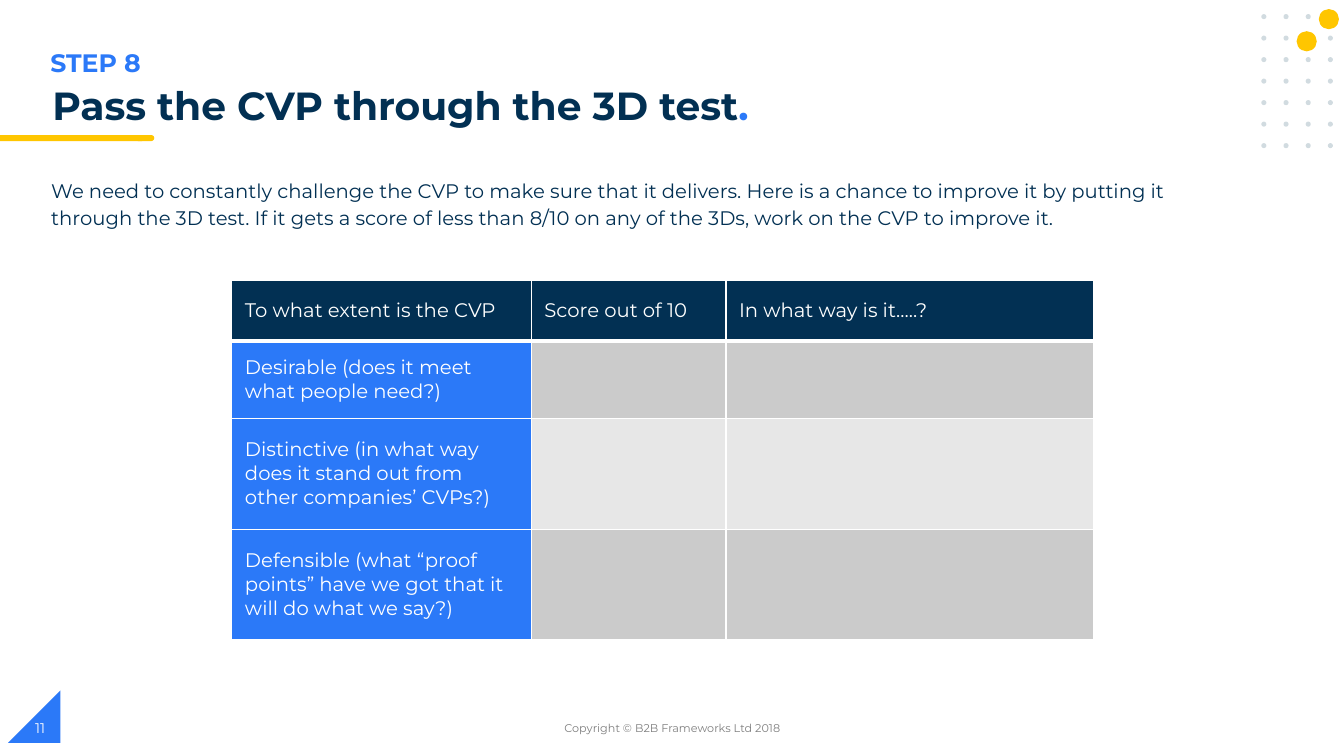
from dataclasses import dataclass

from lxml.etree import SubElement
from pptx import Presentation
from pptx.dml.color import RGBColor
from pptx.enum.shapes import MSO_SHAPE as Shape
from pptx.enum.text import MSO_ANCHOR as Anchor, MSO_AUTO_SIZE as Fit, PP_ALIGN as Align
from pptx.oxml.ns import qn
from pptx.util import Inches, Pt

NAVY, BLUE, GOLD, WHITE = "023053", "2B79F8", "FFC600", "FFFFFF"
DARK, LIGHT, DOT, GREY = "CBCBCB", "E7E7E7", "D1DBE0", "7F7F7F"
FONT = "Montserrat"


@dataclass
class Mark:
    kind: Shape
    x: float
    y: float
    w: float
    h: float
    fill: str
    turn: float = 0


@dataclass
class Label:
    x: float
    y: float
    w: float
    h: float
    runs: list[tuple[str, str]]
    size: float
    bold: bool = False
    align: Align = Align.LEFT
    anchor: Anchor = Anchor.TOP
    lead: float = 1.0
    grow: bool = False


@dataclass
class Row:
    height: float
    texts: tuple[str, str, str]
    fills: tuple[str, str, str]


def color(code: str) -> RGBColor:
    return RGBColor.from_string(code)


def set_font(para, size: float, bold: bool = False) -> None:
    para.font.name = FONT
    para.font.size = Pt(size)
    para.font.bold = bold


def draw_mark(slide, mark: Mark):
    shape = slide.shapes.add_shape(
        mark.kind, Inches(mark.x), Inches(mark.y), Inches(mark.w), Inches(mark.h))
    shape.shadow.inherit = False
    shape.fill.solid()
    shape.fill.fore_color.rgb = color(mark.fill)
    shape.line.fill.background()
    shape.rotation = mark.turn
    return shape


def draw_label(slide, label: Label) -> None:
    box = slide.shapes.add_textbox(
        Inches(label.x), Inches(label.y), Inches(label.w), Inches(label.h))
    frame = box.text_frame
    frame.word_wrap = True
    frame.auto_size = Fit.SHAPE_TO_FIT_TEXT if label.grow else Fit.NONE
    frame.vertical_anchor = label.anchor
    para = frame.paragraphs[0]
    para.alignment = label.align
    para.line_spacing = label.lead
    set_font(para, label.size, label.bold)
    for text, code in label.runs:
        run = para.add_run()
        run.text = text
        run.font.color.rgb = color(code)


def add_edges(cell, top: float, bottom: float) -> None:
    props = cell._tc.get_or_add_tcPr()
    for side, width in (("L", 1), ("R", 1), ("T", top), ("B", bottom)):
        line = SubElement(props, qn(f"a:ln{side}"), w=str(Pt(width)))
        fill = SubElement(line, qn("a:solidFill"))
        SubElement(fill, qn("a:srgbClr"), val=WHITE)


def draw_table(slide, x: float, y: float, widths: list[float], rows: list[Row]) -> None:
    height = sum(row.height for row in rows)
    table = slide.shapes.add_table(
        len(rows), len(widths), Inches(x), Inches(y),
        Inches(sum(widths)), Inches(height)).table
    table.first_row = table.horz_banding = False
    for col, width in zip(table.columns, widths):
        col.width = Inches(width)
    for i, row in enumerate(rows):
        table.rows[i].height = Inches(row.height)
        for j, (text, fill) in enumerate(zip(row.texts, row.fills)):
            cell = table.cell(i, j)
            add_edges(cell, 3 if i == 1 else 1, 3 if i == 0 else 1)
            cell.fill.solid()
            cell.fill.fore_color.rgb = color(fill)
            cell.vertical_anchor = Anchor.MIDDLE
            cell.margin_left = cell.margin_right = Inches(0.13)
            cell.text = text
            para = cell.text_frame.paragraphs[0]
            set_font(para, 14)
            para.font.color.rgb = color(WHITE)


ROWS = [
    Row(0.6, ("To what extent is the CVP", "Score out of 10", "In what way is it…..?"),
        (NAVY, NAVY, NAVY)),
    Row(0.77, ("Desirable (does it meet what people need?)", "", ""),
        (BLUE, DARK, DARK)),
    Row(1.1, ("Distinctive (in what way does it stand out from other companies’ CVPs?)", "", ""),
        (BLUE, LIGHT, LIGHT)),
    Row(1.1, ("Defensible (what “proof points” have we got that it will do what we say?)", "", ""),
        (BLUE, DARK, DARK)),
]

LABELS = [
    Label(0.41, 1.69, 11.31, 0.61, [(
        "We need to constantly challenge the CVP to make sure that it delivers. "
        "Here is a chance to improve it by putting it through the 3D test. "
        "If it gets a score of less than 8/10 on any of the 3Ds, "
        "work on the CVP to improve it.", NAVY)], 14, lead=1.15, grow=True),
    Label(0.42, 0.81, 8.85, 0.6,
          [("Pass the CVP through the 3D test", NAVY), (".", BLUE)], 28, True, lead=0.9),
    Label(4.42, 7.02, 4.5, 0.4, [("Copyright © B2B Frameworks Ltd 2018", GREY)], 8,
          align=Align.CENTER, anchor=Anchor.MIDDLE),
    Label(0.25, 7.02, 3, 0.4, [("11", WHITE)], 10, anchor=Anchor.MIDDLE),
    Label(0.4, 0.42, 1.39, 0.4, [("STEP 8", BLUE)], 18, True, grow=True),
]


def main() -> None:
    deck = Presentation()
    deck.slide_width, deck.slide_height = Inches(13.33), Inches(7.5)
    slide = deck.slides.add_slide(deck.slide_layouts[6])

    # Page corner
    corner = draw_mark(slide, Mark(Shape.RIGHT_TRIANGLE, 0.08, 6.85, 0.52, 0.52, BLUE))
    corner._element.spPr.get_or_add_xfrm().set("flipH", "1")

    # Dot grid with two gold discs
    for i in range(7):
        for j in range(4):
            x, y = 12.51 + 0.22 * j, 0.14 + 1.28 / 6 * i
            draw_mark(slide, Mark(Shape.OVAL, x, y, 0.05, 0.05, DOT))
    for x, y in ((13.08, 0.09), (12.86, 0.31)):
        draw_mark(slide, Mark(Shape.OVAL, x, y, 0.2, 0.2, GOLD, 120))

    # Score table and text
    draw_table(slide, 2.3, 2.78, [2.97, 1.93, 3.65], ROWS)
    for label in LABELS:
        draw_label(slide, label)

    # Title underline with a round end
    draw_mark(slide, Mark(Shape.FLOWCHART_TERMINATOR, 1.34, 1.34, 0.19, 0.06, GOLD))
    draw_mark(slide, Mark(Shape.RECTANGLE, 0, 1.34, 1.41, 0.06, GOLD))

    deck.save("out.pptx")


if __name__ == "__main__":
    main()
